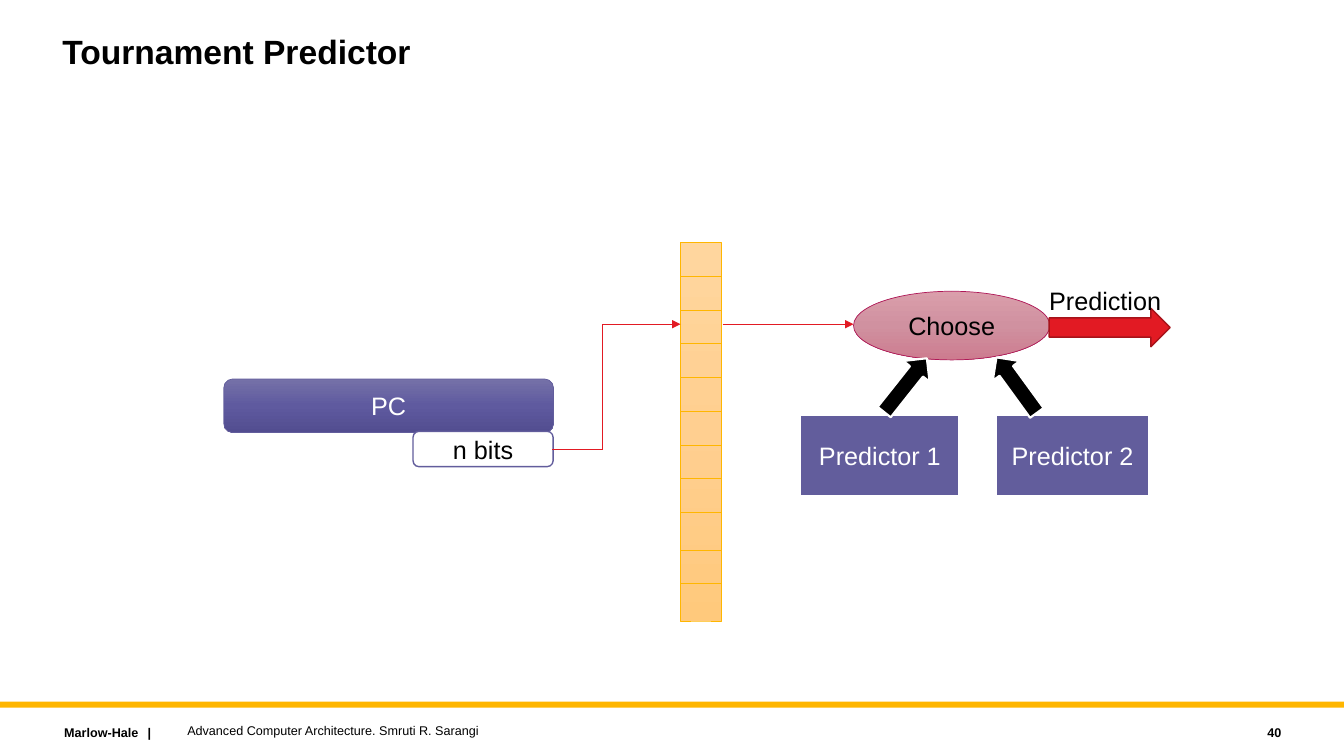
from copy import deepcopy

from lxml import etree
from pptx import Presentation
from pptx.dml import color
from pptx.enum import shapes, text
from pptx.oxml import ns
from pptx.util import Cm, Pt

BLACK, WHITE = "000000", "FFFFFF"
PURPLE, GOLD, RED = "625D9C", "FFB600", "E21A23"
SHAPE = shapes.MSO_SHAPE
ALIGN = text.PP_ALIGN
ANCHOR = text.MSO_ANCHOR


def rgb(value):
    return color.RGBColor.from_string(value)


def write(tf, content, size, ink, bold=False, align=ALIGN.LEFT, tab=None):
    p = tf.paragraphs[0]
    p.text = content
    p.alignment = align
    if tab:
        tabs = etree.SubElement(p._p.get_or_add_pPr(), ns.qn("a:tabLst"))
        etree.SubElement(tabs, ns.qn("a:tab"), pos=str(Cm(tab)), algn="l")
    p.font.name = "Arial"
    p.font.size = Pt(size)
    p.font.bold = bold
    p.font.color.rgb = rgb(ink)
    return p


def add_label(s, content, box, size=9, bold=False, align=ALIGN.LEFT,
              anchor=ANCHOR.TOP, wrap=True, tab=None):
    tf = s.shapes.add_textbox(*map(Cm, box)).text_frame
    tf.word_wrap = wrap
    tf.vertical_anchor = anchor
    return write(tf, content, size, BLACK, bold, align, tab)


def fill_gradient(sp, colors):
    sp.fill.gradient()
    sp.fill.gradient_angle = 270
    stop_list = sp._element.spPr.find(".//" + ns.qn("a:gsLst"))
    middle = deepcopy(stop_list[0])
    middle.set("pos", "50000")
    stop_list.insert(1, middle)
    for stop, value in zip(sp.fill.gradient_stops, colors):
        stop.color.rgb = rgb(value)


def add_block(s, kind, box, fill, line=None, width=0.5, content="",
              ink=WHITE, rotation=0):
    sp = s.shapes.add_shape(kind, *map(Cm, box))
    sp.shadow.inherit = False
    sp.rotation = rotation
    if isinstance(fill, str):
        sp.fill.solid()
        sp.fill.fore_color.rgb = rgb(fill)
    else:
        fill_gradient(sp, fill)
    if line:
        sp.line.color.rgb = rgb(line)
        sp.line.width = Pt(width)
    else:
        sp.line.fill.background()
    if content:
        sp.text_frame.vertical_anchor = ANCHOR.MIDDLE
        write(sp.text_frame, content, 18, ink, align=ALIGN.CENTER)


def add_line(s, start, end, ink, arrow=False):
    line = s.shapes.add_connector(shapes.MSO_CONNECTOR.STRAIGHT,
                                  *map(Cm, start + end))
    line.line.color.rgb = rgb(ink)
    line.line.width = Pt(0.5)
    if arrow:
        etree.SubElement(line.line._get_or_add_ln(), ns.qn("a:tailEnd"),
                         type="triangle")
    etree.SubElement(line._element.spPr, ns.qn("a:effectLst"))


def add_frame(s):
    add_block(s, SHAPE.RECTANGLE, (0, 17.68, 33.87, 0.15), GOLD)
    add_label(s, "Marlow-Hale\t|", (1.37, 18.14, 5.77, 0.64), bold=True,
              tab=2.1)
    title = add_label(s, "Tournament Predictor", (1.32, 0.76, 25.4, 2.29),
                      24, bold=True)
    title.line_spacing = 0.9
    add_label(s, "Advanced Computer Architecture. Smruti R. Sarangi",
              (4.47, 18.08, 20.32, 0.64), anchor=ANCHOR.MIDDLE)
    add_label(s, "40", (28.98, 18.14, 3.56, 0.64), bold=True,
              align=ALIGN.RIGHT, anchor=ANCHOR.MIDDLE)


def add_counter(s):
    add_block(s, SHAPE.ROUNDED_RECTANGLE, (5.64, 9.55, 8.31, 1.35),
              ("7571A8", "5F5A9F", "524D90"), PURPLE, content="PC")
    add_block(s, SHAPE.ROUNDED_RECTANGLE, (10.41, 10.87, 3.53, 0.89),
              WHITE, PURPLE, 1, "n bits", BLACK)


def add_table_column(s):
    left, right = 17.15, 18.19
    add_block(s, SHAPE.RECTANGLE, (left, 6.12, right - left, 9.53),
              ("FFD69E", "FFCF90", "FFC97C"), GOLD)
    for i in range(10):
        y = 6.96 + 0.85 * i + (0.1 if i > 7 else 0)
        add_line(s, (left, y), (right, y), GOLD)


def add_wires(s):
    bend, low, high = 15.19, 11.33, 8.17
    add_line(s, (13.92, low), (bend, low), RED)
    add_line(s, (bend, low), (bend, high), RED)
    add_line(s, (bend, high), (17.15, high), RED, arrow=True)
    add_line(s, (18.21, high), (21.51, high), RED, arrow=True)


def add_chooser(s):
    add_block(s, SHAPE.OVAL, (21.51, 7.34, 4.95, 1.73),
              ("DA9EAB", "D091A0", "CD7C8F"), "AF1858", content="Choose",
              ink=BLACK)
    for name, left, width in (("Predictor 1", 20.17, 4.01),
                              ("Predictor 2", 25.1, 3.86)):
        add_block(s, SHAPE.RECTANGLE, (left, 10.46, width, 2.03), PURPLE,
                  WHITE, 1.5, name)
    for left, rotation in ((22.4, 218.4), (25.2, 144)):
        add_block(s, SHAPE.DOWN_ARROW, (left, 8.84, 0.84, 1.73), BLACK,
                  WHITE, 1.5, rotation=rotation)
    add_block(s, SHAPE.RIGHT_ARROW, (26.44, 7.77, 3.05, 0.97), RED,
              "A7131A", 1)
    add_label(s, "Prediction", (26.19, 7.06, 3.35, 1.02), 18, wrap=False)


def main():
    prs = Presentation()
    prs.slide_width, prs.slide_height = Cm(33.87), Cm(19.05)
    s = prs.slides.add_slide(prs.slide_layouts[6])
    add_frame(s)
    add_counter(s)
    add_table_column(s)
    add_wires(s)
    add_chooser(s)
    prs.save("out.pptx")


if __name__ == "__main__":
    main()
